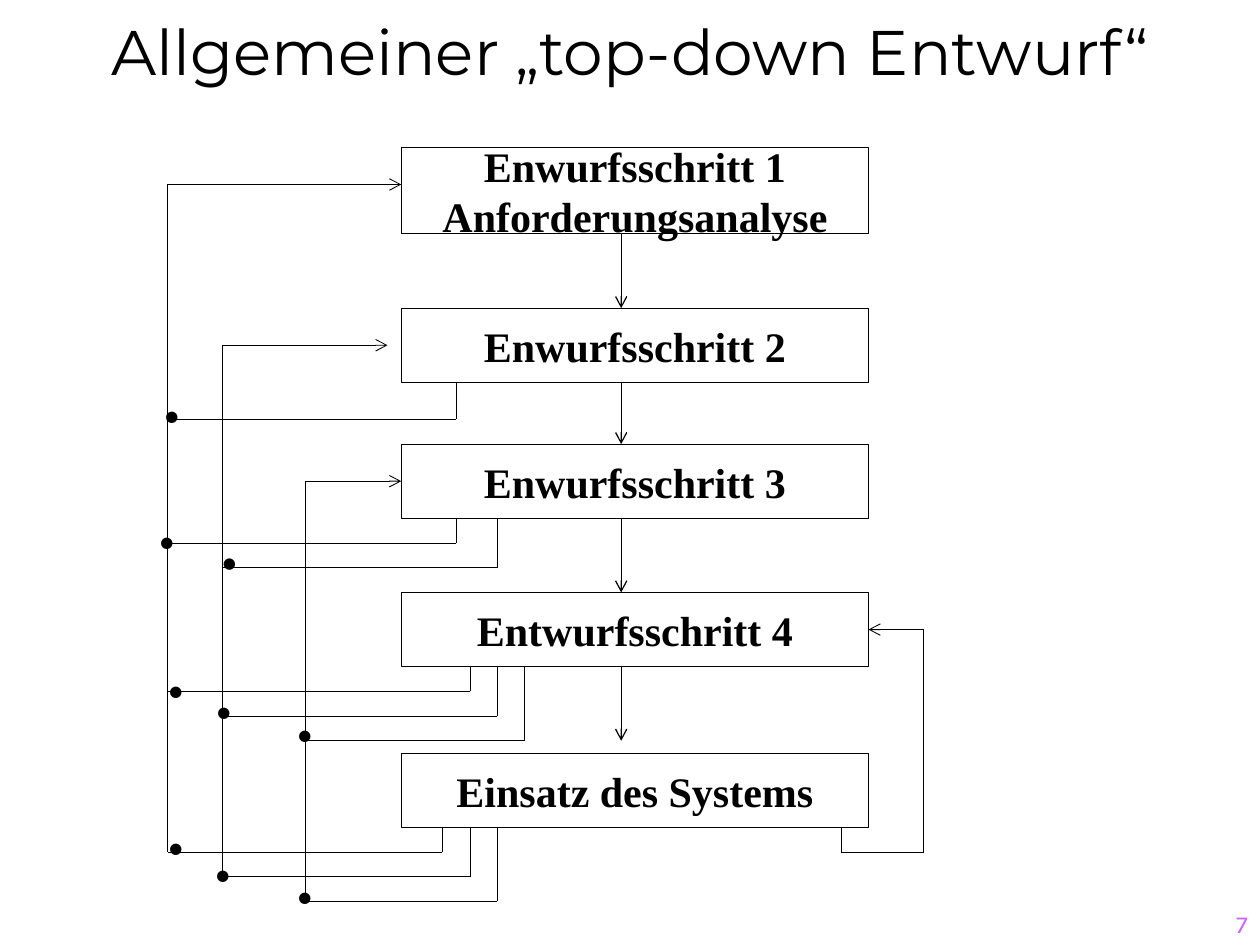
from lxml.etree import SubElement
from pptx import Presentation
from pptx.dml.color import RGBColor
from pptx.enum.shapes import MSO_CONNECTOR as Connector, MSO_SHAPE as Shape
from pptx.enum.text import MSO_ANCHOR as Anchor, PP_ALIGN as Align
from pptx.oxml.ns import qn
from pptx.util import Inches, Pt

COLORS = {"ink": "000000", "page": "CC66FF"}
SERIF = "Times New Roman"
COLUMNS, ROWS = 55, 61  # grid of the diagram
BOX_LEFT, BOX_RIGHT, FLOW = 17, 51, 33
LEFT_SIDE, RIGHT_SIDE = 1, 3

# text, top row, bottom row
STEPS = [
    ("Enwurfsschritt 1\nAnforderungsanalyse", 0, 7),
    ("Enwurfsschritt 2", 13, 19),
    ("Enwurfsschritt 3", 24, 30),
    ("Entwurfsschritt 4", 36, 42),
    ("Einsatz des Systems", 49, 55),
]
# column, bottom row, top row, column of the arrowhead, step joined
RAILS = [(0, 57, 3, 17, None), (4, 59, 16, 16, None), (10, 61, 27, 17, 2)]
# start column, start row, turning row, column of the rail
RETURNS = [
    (21, 19, 22, 0),
    (21, 30, 32, 0), (24, 30, 34, 4),
    (22, 42, 44, 0), (24, 42, 46, 4), (26, 42, 48, 10),
    (20, 55, 57, 0), (22, 55, 59, 4), (24, 55, 61, 10),
]
# sign, size, centre column, top row, columns wide, rows high
DOTS = [
    (".", 40, 0.3, 16.1, 5.2, 7.8),
    (".", 40, 0, 26.3, 6, 7.8),
    ("•", 24, 4.5, 31, 5, 5.1),
    (".", 40, 0.6, 38.3, 5, 7.8),
    (".", 40, 4.1, 40, 5, 7.8),
    (".", 40, 10, 41.9, 4, 7.8),
    (".", 40, 0.6, 51, 5, 7.8),
    (".", 40, 4, 53.2, 3, 7.8),
    (".", 40, 10, 55, 6, 7.8),
]


def write(shape, text, size, font, color="ink", bold=False,
          align=Align.CENTER, anchor=Anchor.TOP, wrap=True):
    frame = shape.text_frame
    frame.text = text
    frame.word_wrap = wrap
    frame.vertical_anchor = anchor
    for paragraph in frame.paragraphs:
        paragraph.alignment = align
        for run in paragraph.runs:
            run.font.size = Pt(size)
            run.font.name = font
            run.font.bold = bold
            run.font.color.rgb = RGBColor.from_string(COLORS[color])


def add_line(slide, start, end, width=0.5, arrow=False):
    line = slide.shapes.add_connector(Connector.STRAIGHT, *start, *end)
    line.line.width = Pt(width)
    line.line.color.rgb = RGBColor.from_string(COLORS["ink"])
    properties = line.element.spPr
    if arrow:
        SubElement(properties.find(qn("a:ln")), qn("a:tailEnd"), type="arrow")
    SubElement(properties, qn("a:effectLst"))
    return line


def add_step(slide, text, left, top, width, height):
    step = slide.shapes.add_shape(Shape.RECTANGLE, left, top, width, height)
    step.shadow.inherit = False
    step.fill.background()
    step.line.color.rgb = RGBColor.from_string(COLORS["ink"])
    step.line.width = Pt(0.5)
    write(step, text, 24, SERIF, bold=True, anchor=Anchor.MIDDLE, wrap=False)
    return step


def build_title(slide, left, top, width, height):
    title = slide.shapes.add_textbox(left, top, width, height)
    write(title, "Allgemeiner „top-down Entwurf“", 36, "Montserrat",
          anchor=Anchor.BOTTOM)


def build_page_number(slide, left, top, width, height):
    number = slide.shapes.add_textbox(left, top, width, height)
    write(number, "7", 14, "Karla", "page", align=Align.RIGHT,
          anchor=Anchor.BOTTOM)


def build_diagram(slide, left, top, width, height):
    def across(columns):
        return int(width * columns / COLUMNS)

    def down(rows):
        return int(height * rows / ROWS)

    def at(column, row):
        return left + across(column), top + down(row)

    # Steps
    steps = [
        add_step(slide, text, *at(BOX_LEFT, first),
                 across(BOX_RIGHT - BOX_LEFT), down(last - first))
        for text, first, last in STEPS
    ]

    # Arrows from step to step; the last stops one row short
    for (_, _, start), (_, end, _) in zip(STEPS, STEPS[1:]):
        if end == STEPS[-1][1]:
            end -= 1
        add_line(slide, at(FLOW, start), at(FLOW, end), 0.75, arrow=True)

    # Feedback rails on the left
    for column, bottom, turn, head, joined in RAILS:
        add_line(slide, at(column, bottom), at(column, turn))
        arrow = add_line(slide, at(column, turn), at(head, turn), arrow=True)
        if joined is not None:
            arrow.end_connect(steps[joined], LEFT_SIDE)

    # Returns from the steps to the rails
    for column, start, turn, rail in RETURNS:
        add_line(slide, at(column, start), at(column, turn))
        add_line(slide, at(column, turn), at(rail, turn))

    # Loop on the right, from the last step back to step 4
    corners = [at(49, 55), at(49, 57), at(COLUMNS, 57), at(COLUMNS, 39)]
    for start, end in zip(corners, corners[1:]):
        add_line(slide, start, end)
    arrow = add_line(slide, corners[-1], at(BOX_RIGHT, 39), arrow=True)
    arrow.end_connect(steps[3], RIGHT_SIDE)

    # Junction dots
    for sign, size, centre, row, columns, rows in DOTS:
        dot = slide.shapes.add_textbox(*at(centre - columns / 2, row),
                                       across(columns), down(rows))
        write(dot, sign, size, SERIF, bold=True)


def main():
    presentation = Presentation()
    presentation.slide_width = Inches(10)
    presentation.slide_height = Inches(7.5)
    slide = presentation.slides.add_slide(presentation.slide_layouts[6])

    def share(left, top, width, height):
        page_width, page_height = (presentation.slide_width,
                                   presentation.slide_height)
        return (int(page_width * left), int(page_height * top),
                int(page_width * width), int(page_height * height))

    build_page_number(slide, *share(0.79, 14 / 15, 0.21, 1 / 15))
    build_title(slide, *share(0, 0, 1, 0.1))
    build_diagram(slide, *share(0.133, 0.156, 0.6, 0.798))
    presentation.save("out.pptx")


if __name__ == "__main__":
    main()
